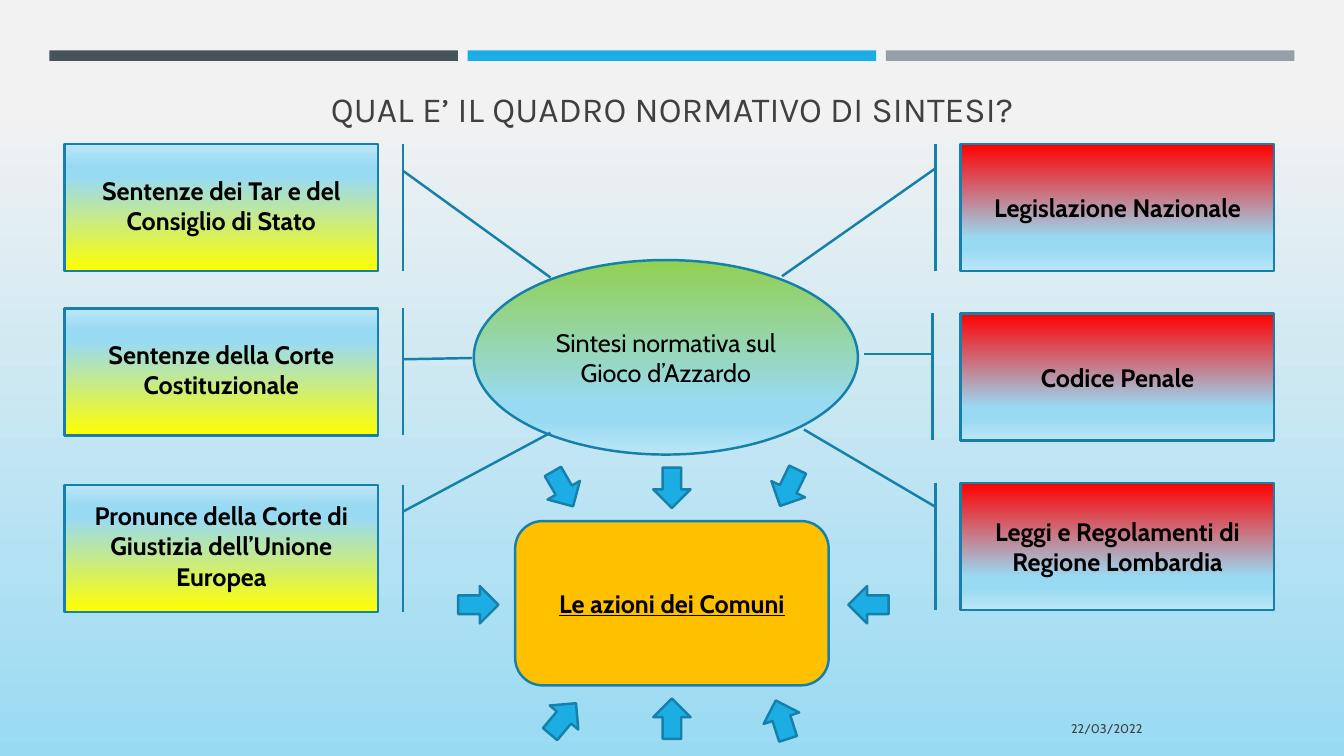
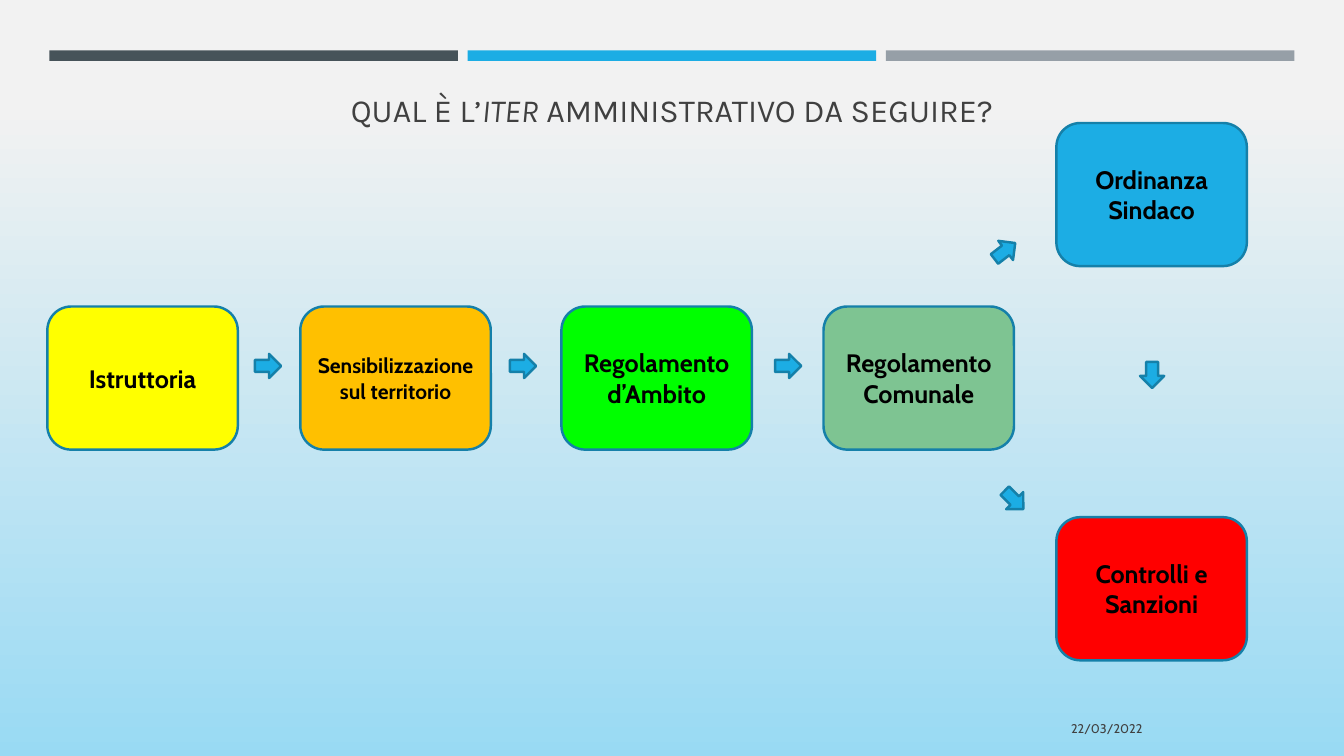
from lxml import etree
from pptx import Presentation
from pptx import util as u
from pptx.dml.color import RGBColor
from pptx.enum import shapes, text
from pptx.oxml.ns import qn

COLORS = {
    "slate": "465359", "blue": "1CADE4", "gray": "969FA7", "outline": "1580A9",
    "title": "404040", "text": "000000", "paper": "F2F2F2", "sky": "99DAF3",
    "pale": "BBE6F7", "leaf": "92D050", "red": "FF0000", "yellow": "FFFF00",
    "amber": "FFC000", "green": "00FF00", "sage": "7EC492",
}
HEAD, BODY = "Karla", "Cabin"
W, H = u.Inches(13.33), u.Inches(7.5)
PAGE = (0, 0, W, H)
MSO = shapes.MSO_SHAPE
MIDDLE, TOP, BOTTOM = (text.MSO_ANCHOR.MIDDLE, text.MSO_ANCHOR.TOP,
                       text.MSO_ANCHOR.BOTTOM)
CENTER, RIGHT = text.PP_ALIGN.CENTER, text.PP_ALIGN.RIGHT


# Shared helpers: boxes are (left, top, width, height)
def inside(box, x, y, w, h):
    """Return a part of the box, given in percent of its size."""
    bx, by, bw, bh = box
    return (round(bx + bw * x / 100), round(by + bh * y / 100),
            round(bw * w / 100), round(bh * h / 100))


def rgb(name):
    return RGBColor.from_string(COLORS[name])


def gradient(fill, element, stops):
    """Fill from top to bottom with (percent, colour) stops."""
    fill.gradient()
    fill.gradient_angle = 270
    stop_list = element.find(".//" + qn("a:gsLst"))
    for old in list(stop_list):
        stop_list.remove(old)
    for pos, name in stops:
        stop = etree.SubElement(stop_list, qn("a:gs"), pos=str(pos * 1000))
        etree.SubElement(stop, qn("a:srgbClr"), val=COLORS[name])


def to_sky(name):
    return [(0, name), (74, "sky"), (83, "sky"), (100, "pale")]


def write(sp, runs, size=18, font=BODY, color="text", bold=False,
          underline=False, align=CENTER, anchor=MIDDLE):
    """Write runs, given as (text, italic) pairs or as one string."""
    tf = sp.text_frame
    tf.word_wrap = True
    tf.vertical_anchor = anchor
    p = tf.paragraphs[0]
    p.alignment = align
    for words, italic in [(runs, False)] if isinstance(runs, str) else runs:
        r = p.add_run()
        r.text = words
        r.font.size, r.font.name = u.Pt(size), font
        r.font.bold, r.font.italic = bold, italic
        r.font.underline = underline
        r.font.color.rgb = rgb(color)


def add_text(s, box, runs, **style):
    write(s.shapes.add_textbox(*box), runs, **style)


def add_shape(s, kind, box, fill, rotation=0, outlined=True):
    """Add a preset shape filled with a colour name or gradient stops."""
    sp = s.shapes.add_shape(kind, *box)
    sp.shadow.inherit = False
    sp.rotation = rotation
    if isinstance(fill, str):
        sp.fill.solid()
        sp.fill.fore_color.rgb = rgb(fill)
    else:
        gradient(sp.fill, sp.element, fill)
    if outlined:
        sp.line.color.rgb = rgb("outline")
        sp.line.width = u.Pt(1.75)
    else:
        sp.line.fill.background()
    return sp


def add_arrows(s, kind, box, w, h, arrows):
    """Place block arrows by centre (percent of the box) and rotation."""
    for x, y, rotation in arrows:
        add_shape(s, kind, inside(box, x - w / 2, y - h / 2, w, h),
                  "blue", rotation)


# Frame of every slide: background, bands, title, date
def new_slide(prs, title, size):
    s = prs.slides.add_slide(prs.slide_layouts[6])
    gradient(s.background.fill, s.element, [(14, "paper"), (100, "sky")])
    for i, name in enumerate(("slate", "blue", "gray")):
        add_shape(s, MSO.RECTANGLE, inside(PAGE, 3.67 + 31.12 * i, 6.67, 30.4, 1.4),
                  name, outlined=False)
    add_text(s, inside(PAGE, 4.8, 10.27, 90.45, 7.47), title, size=size,
             font=HEAD, color="title", anchor=BOTTOM)
    add_text(s, inside(PAGE, 62.4, 93.73, 23.33, 5.33), "22/03/2022", size=9,
             color="title", align=RIGHT)
    return s


# Slide 1 regions
def source_column(s, box, color, items, flipped=False):
    """Stack callouts: (top, words, callout line adjustments)."""
    for top, words, adjustments in items:
        row = inside(box, 0, top, 100, 27.27)
        sp = add_shape(s, MSO.LINE_CALLOUT_1_BORDER_AND_ACCENT_BAR, row,
                       to_sky(color), 180 if flipped else 0)
        for i, value in enumerate(adjustments):
            sp.adjustments[i] = value
        if flipped:  # upright words over the turned callout
            add_text(s, inside(row, 0, -2, 100, 100), words, bold=True)
        else:
            write(sp, words, bold=True)


def municipal_actions(s, box):
    sp = add_shape(s, MSO.ROUNDED_RECTANGLE, box, "amber")
    write(sp, "Le azioni dei Comuni", bold=True, underline=True)
    add_arrows(s, MSO.DOWN_ARROW, box, 11.9, 24.54, [
        (50, -20.25, 0), (87.3, -20.25, 25.8), (15.27, -19.63, 330),
        (112.7, 50.92, 90), (-11.74, 50.92, 270),
        (50, 120.25, 180), (85.05, 120.86, 162.2), (15.27, 120.25, 220.1)])


def framework_slide(prs):
    s = new_slide(prs, "QUAL E’ IL QUADRO NORMATIVO DI SINTESI?", 25.2)
    hub = add_shape(s, MSO.OVAL, inside(PAGE, 35.25, 34.4, 28.58, 25.73),
                    to_sky("leaf"))
    write(hub, "Sintesi normativa sul Gioco d’Azzardo")
    source_column(s, inside(PAGE, 71.48, 19.07, 23.33, 61.6), "red", [
        (0, "Legislazione Nazionale", (0.19, -0.08, 1.04, -0.57)),
        (36.36, "Codice Penale", (0.32, -0.09, 0.32, -0.31)),
        (72.73, "Leggi e Regolamenti di Regione Lombardia",
         (0.19, -0.08, -0.42, -0.5))])
    source_column(s, inside(PAGE, 4.8, 19.07, 23.33, 61.6), "yellow", [
        (0, "Sentenze dei Tar e del Consiglio di Stato",
         (0.79, -0.08, -0.05, -0.55)),
        (35.28, "Sentenze della Corte Costituzionale",
         (0.6, -0.08, 0.61, -0.3)),
        (73.16, "Pronunce della Corte di Giustizia dell’Unione Europea",
         (0.79, -0.08, 1.41, -0.55))], flipped=True)
    municipal_actions(s, inside(PAGE, 38.33, 68.93, 23.33, 21.73))


# Slide 2 regions
def procedure_flow(s, box):
    main, first, last = 34.15, 0, 73.36  # row tops
    for x, y, words, color, size in [
            (0, main, "Istruttoria", "yellow", 18),
            (21.09, main, "Sensibilizzazione sul territorio", "amber", 15),
            (42.86, main, "Regolamento d’Ambito", "green", 18),
            (64.71, main, "Regolamento Comunale", "sage", 18),
            (84.12, first, "Ordinanza Sindaco", "blue", 18),
            (84.12, last, "Controlli e Sanzioni", "red", 18)]:
        sp = add_shape(s, MSO.ROUNDED_RECTANGLE,
                       inside(box, x, y, 15.88, 26.64), color)
        write(sp, words, size=size, bold=True)
    add_arrows(s, MSO.RIGHT_ARROW, box, 2.18, 4.5, [
        (18.4, 45.22, 0), (39.66, 45.22, 0), (61.76, 45.22, 0),
        (79.83, 23.83, 322.5), (80.59, 70.17, 44.9), (92.1, 46.9, 90)])


def procedure_slide(prs):
    s = new_slide(prs, [("QUAL È L’", False), ("ITER", True),
                        (" AMMINISTRATIVO DA SEGUIRE?", False)], 23)
    procedure_flow(s, inside(PAGE, 3.52, 16.27, 89.25, 71.07))


def main():
    prs = Presentation()
    prs.slide_width, prs.slide_height = W, H
    framework_slide(prs)
    procedure_slide(prs)
    prs.save("out.pptx")


if __name__ == "__main__":
    main()
